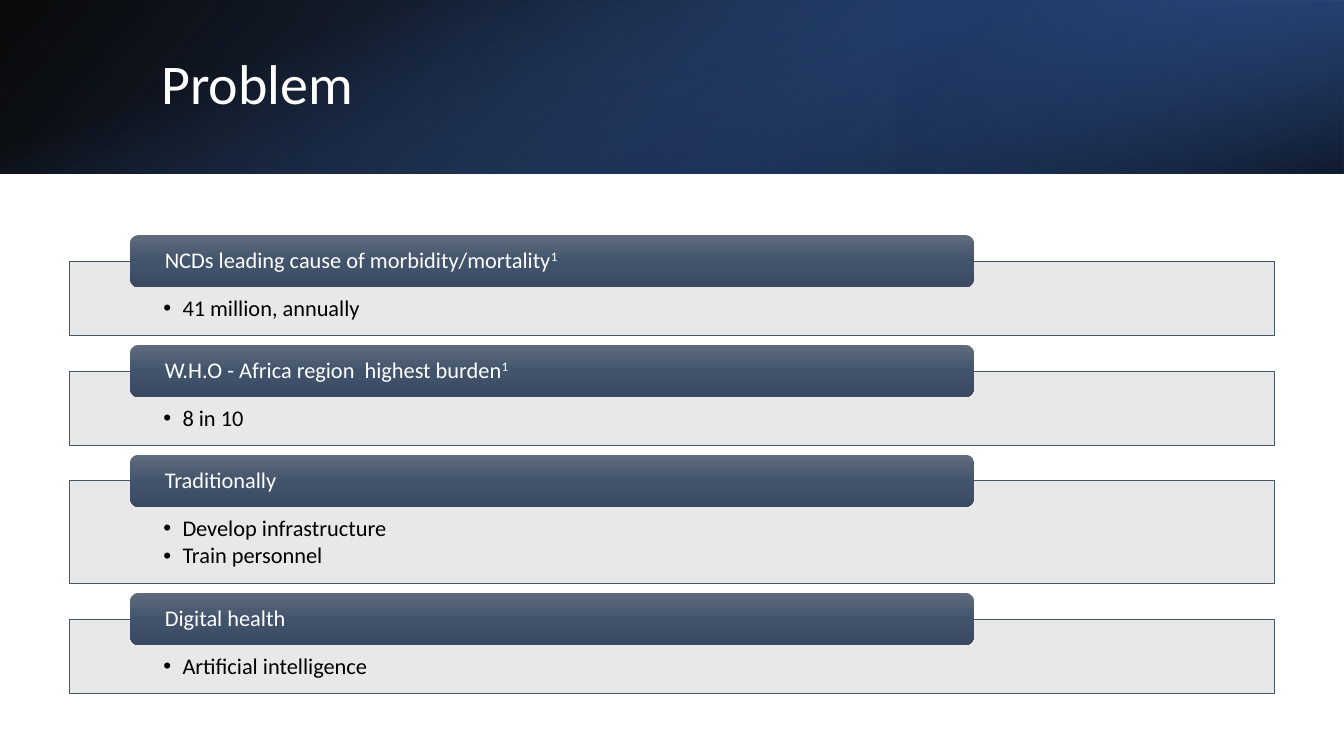
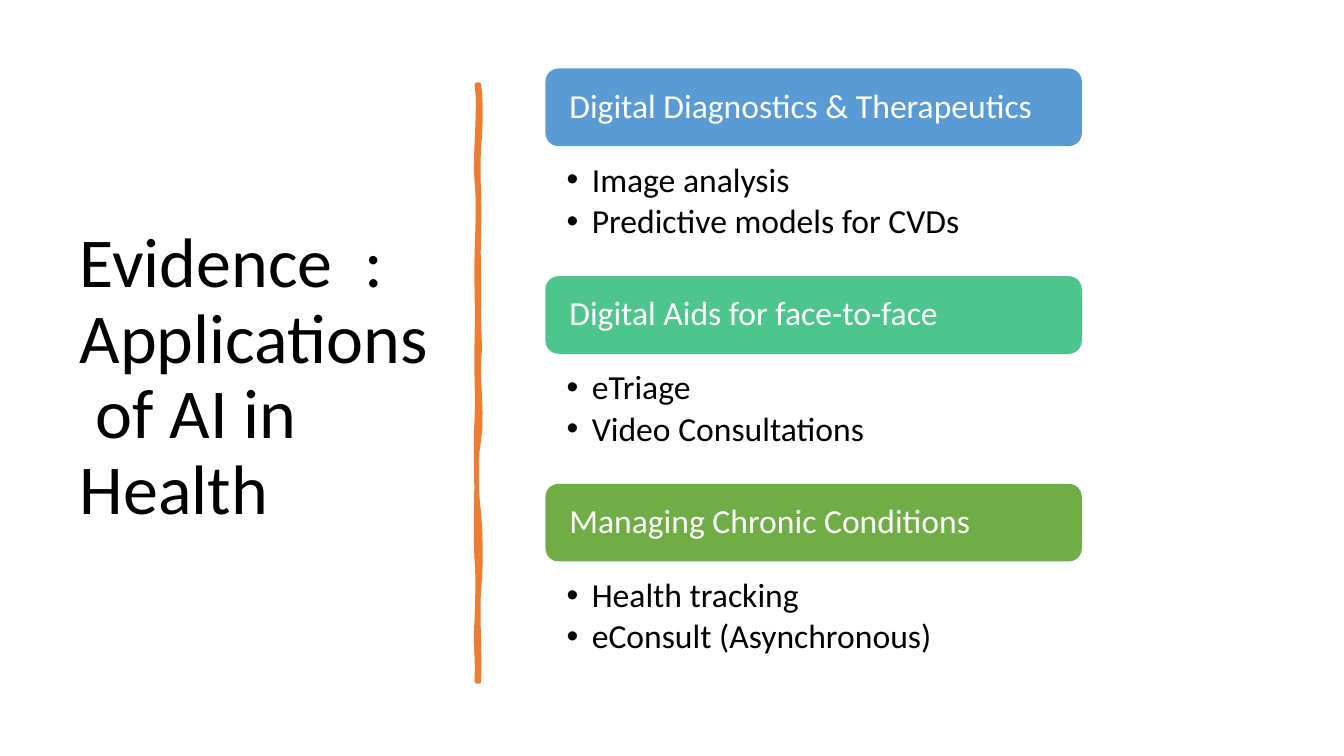
from lxml import etree
from pptx import Presentation
from pptx import util as u
from pptx.dml.color import RGBColor
from pptx.enum import shapes, text
from pptx.oxml.ns import qn

FONT = "Calibri"
WHITE = RGBColor(0xFF, 0xFF, 0xFF)
BLACK = RGBColor(0, 0, 0)
NAVY = RGBColor(0x20, 0x38, 0x64)
DEEP_BLUE = RGBColor(0x2F, 0x55, 0x97)
ROYAL = RGBColor(0x44, 0x72, 0xC4)
SLATE = RGBColor(0x44, 0x54, 0x6A)
SLATE_TOP = RGBColor(0x60, 0x6B, 0x7D)
SLATE_MID = RGBColor(0x42, 0x54, 0x6C)
SLATE_LOW = RGBColor(0x39, 0x4A, 0x62)
PALE = RGBColor(0xE7, 0xE6, 0xE6)
ORANGE = RGBColor(0xED, 0x7D, 0x31)
SKY = RGBColor(0x5B, 0x9B, 0xD5)
MINT = RGBColor(0x4D, 0xC5, 0x8D)
GREEN = RGBColor(0x70, 0xAD, 0x47)

SLATE_GRADIENT = [(0, SLATE_TOP, 100), (50, SLATE_MID, 100), (100, SLATE_LOW, 100)]

PROBLEMS = [
    ("NCDs leading cause of morbidity/mortality", "1", ["41 million, annually"], SLATE_GRADIENT),
    ("W.H.O - Africa region  highest burden", "1", ["8 in 10"], SLATE_GRADIENT),
    ("Traditionally", "", ["Develop infrastructure", "Train personnel"], SLATE_GRADIENT),
    ("Digital health", "", ["Artificial intelligence"], SLATE_GRADIENT),
]
APPLICATIONS = [
    ("Digital Diagnostics & Therapeutics", "", ["Image analysis", "Predictive models for CVDs"], SKY),
    ("Digital Aids for face-to-face", "", ["eTriage", "Video Consultations"], MINT),
    ("Managing Chronic Conditions", "", ["Health tracking", "eConsult (Asynchronous)"], GREEN),
]

STROKE_START = (4.75, 0.84)
STROKE_CURVES = [
    (4.77, 1.02, 4.77, 1.19, 4.75, 1.46),
    (4.73, 1.73, 4.76, 1.95, 4.75, 2.26),
    (4.74, 2.57, 4.75, 2.62, 4.75, 2.94),
    (4.74, 3.25, 4.77, 3.42, 4.75, 3.56),
    (4.73, 3.7, 4.79, 4.14, 4.75, 4.36),
    (4.71, 4.57, 4.72, 4.84, 4.75, 5.1),
    (4.77, 5.36, 4.77, 5.64, 4.75, 5.84),
    (4.73, 6.03, 4.76, 6.5, 4.75, 6.76),
    (4.74, 6.76, 4.73, 6.76, 4.73, 6.76),
    (4.74, 6.46, 4.71, 6.44, 4.73, 6.13),
    (4.74, 5.83, 4.74, 5.7, 4.73, 5.57),
    (4.72, 5.44, 4.72, 4.95, 4.73, 4.77),
    (4.73, 4.59, 4.71, 4.45, 4.73, 4.15),
    (4.74, 3.86, 4.72, 3.73, 4.73, 3.35),
    (4.74, 2.98, 4.72, 2.81, 4.73, 2.5),
    (4.74, 2.18, 4.75, 2.0, 4.73, 1.81),
    (4.7, 1.63, 4.77, 1.04, 4.73, 0.84),
]


def child(parent, tag, **attributes):
    return etree.SubElement(parent, qn(tag), {k: str(v) for k, v in attributes.items()})


def gradient_fill(shape, stops, angle):
    shape.fill.background()
    placeholder = shape.element.spPr.find(qn("a:noFill"))
    gradient = etree.Element(qn("a:gradFill"), {"rotWithShape": "1"})
    stop_list = child(gradient, "a:gsLst")
    for position, color, opacity in stops:
        stop = child(stop_list, "a:gs", pos=position * 1000)
        tone = child(stop, "a:srgbClr", val=color)
        child(tone, "a:alpha", val=opacity * 1000)
    child(gradient, "a:lin", ang=angle * 60000, scaled=0)
    placeholder.getparent().replace(placeholder, gradient)


def write(frame, lines, size, color, anchor=text.MSO_ANCHOR.MIDDLE, insets=None,
          bullet_indent=0, after=0, superscript=""):
    frame.word_wrap = True
    frame.auto_size = text.MSO_AUTO_SIZE.NONE
    frame.vertical_anchor = anchor
    if insets:
        frame.margin_left, frame.margin_top, frame.margin_right, frame.margin_bottom = map(u.Inches, insets)
    frame.text = "\n".join(lines)
    for paragraph in frame.paragraphs:
        paragraph.alignment = text.PP_ALIGN.LEFT
        paragraph.line_spacing = 0.9
        paragraph.space_after = u.Pt(size * after)
        if superscript:
            raised = paragraph.add_run()
            raised.text = superscript
            raised.font.element.set("baseline", "30000") if hasattr(raised.font, "element") \
                else raised._r.get_or_add_rPr().set("baseline", "30000")
        for run in paragraph.runs:
            run.font.name = FONT
            run.font.size = u.Pt(size)
            run.font.color.rgb = color
        if bullet_indent:
            properties = paragraph._p.get_or_add_pPr()
            properties.set("marL", str(u.Inches(bullet_indent)))
            properties.set("indent", str(-u.Inches(bullet_indent)))
            child(properties, "a:buFont", typeface="Arial")
            child(properties, "a:buChar", char="•")


class Deck:
    def __init__(self):
        self.presentation = Presentation()
        self.presentation.slide_width = u.Inches(13.33)
        self.presentation.slide_height = u.Inches(7.5)
        self.slide = None

    def new_slide(self):
        self.slide = self.presentation.slides.add_slide(self.presentation.slide_layouts[5])

    def title(self, wording, box, size, color):
        heading = self.slide.shapes.title
        heading.left, heading.top, heading.width, heading.height = map(u.Inches, box)
        write(heading.text_frame, [wording], size, color)
        self.slide.shapes.element.append(heading.element)

    def block(self, box, fill, kind=shapes.MSO_SHAPE.RECTANGLE, angle=90, opacity=100, line=None):
        block = self.slide.shapes.add_shape(kind, *map(u.Inches, box))
        block.shadow.inherit = False
        if isinstance(fill, list):
            gradient_fill(block, fill, angle)
        else:
            block.fill.solid()
            block.fill.fore_color.rgb = fill
            tone = block.element.spPr.find(qn("a:solidFill"))[0]
            child(tone, "a:alpha", val=opacity * 1000)
        if line:
            block.line.color.rgb = line
            block.line.width = u.Pt(0.5)
        else:
            block.line.fill.background()
        return block

    def band(self, box, stops, angle, rotation=0, flip=False):
        band = self.block(box, stops, angle=angle)
        band.rotation = rotation
        if flip:
            band.element.spPr.find(qn("a:xfrm")).set("flipH", "1")

    def cards(self, cards, panel, bar, gap, extra_line, size, bullet_indent,
              panel_insets, bar_inset, fill, line=None):
        left, top, width, height = panel
        bar_left, lift, bar_width, bar_height = bar
        for heading, superscript, points, bar_fill in cards:
            card_height = height + extra_line * (len(points) - 1)
            body = self.block((left, top, width, card_height), fill, opacity=90, line=line)
            write(body.text_frame, points, size, BLACK, anchor=text.MSO_ANCHOR.TOP,
                  insets=panel_insets, bullet_indent=bullet_indent, after=0.15)
            header = self.block((bar_left, top - lift, bar_width, bar_height), bar_fill,
                                kind=shapes.MSO_SHAPE.ROUNDED_RECTANGLE)
            write(header.text_frame, [heading], size, WHITE,
                  insets=(bar_inset, 0, bar_inset, 0), superscript=superscript)
            top += card_height + gap

    def brush_stroke(self, start, curves, color, steps=6):
        points, (x, y) = [], start
        for ax, ay, bx, by, end_x, end_y in curves:
            for step in range(1, steps + 1):
                t = step / steps
                weights = ((1 - t) ** 3, 3 * t * (1 - t) ** 2, 3 * t * t * (1 - t), t ** 3)
                points.append(tuple(
                    u.Inches(sum(w * v for w, v in zip(weights, values)))
                    for values in ((x, ax, bx, end_x), (y, ay, by, end_y))))
            x, y = end_x, end_y
        builder = self.slide.shapes.build_freeform(*map(u.Inches, start))
        builder.add_line_segments(points, close=True)
        stroke = builder.convert_to_shape()
        stroke.shadow.inherit = False
        stroke.fill.solid()
        stroke.fill.fore_color.rgb = color
        stroke.line.color.rgb = color
        stroke.line.width = u.Pt(3.25)
        child(stroke.element.spPr.find(qn("a:ln")), "a:round")


def problem_slide(deck):
    deck.new_slide()
    deck.band((0, 0, 13.33, 1.72), [(0, BLACK, 96), (100, DEEP_BLUE, 100)], 140, flip=True)
    deck.band((8.89, 0, 4.44, 1.72), [(19, NAVY, 68), (100, ROYAL, 79)], 320, rotation=180, flip=True)
    deck.band((5.8, -5.8, 1.72, 13.33), [(23, ROYAL, 0), (99, BLACK, 74)], 340, rotation=90)
    deck.title("Problem", (1.5, 0.38, 10.98, 0.96), 40, WHITE)
    deck.cards(PROBLEMS, panel=(0.69, 2.59, 11.95, 0.74), bar=(1.29, 0.26, 8.37, 0.52),
               gap=0.35, extra_line=0.28, size=16, bullet_indent=0.19,
               panel_insets=(0.93, 0.36, 0.93, 0.12), bar_inset=0.32, fill=PALE, line=SLATE)


def evidence_slide(deck):
    deck.new_slide()
    deck.title("Evidence  : Applications\v of AI in Health", (0.69, 0.7, 3.74, 6.11), 50, BLACK)
    deck.brush_stroke(STROKE_START, STROKE_CURVES, ORANGE)
    deck.cards(APPLICATIONS, panel=(5.03, 1.07, 7.6, 1.11), bar=(5.41, 0.39, 5.32, 0.77),
               gap=0.53, extra_line=0.42, size=24, bullet_indent=0.25,
               panel_insets=(0.59, 0.55, 0.59, 0.19), bar_inset=0.2, fill=WHITE)


def main():
    deck = Deck()
    problem_slide(deck)
    evidence_slide(deck)
    deck.presentation.save("out.pptx")


if __name__ == "__main__":
    main()
